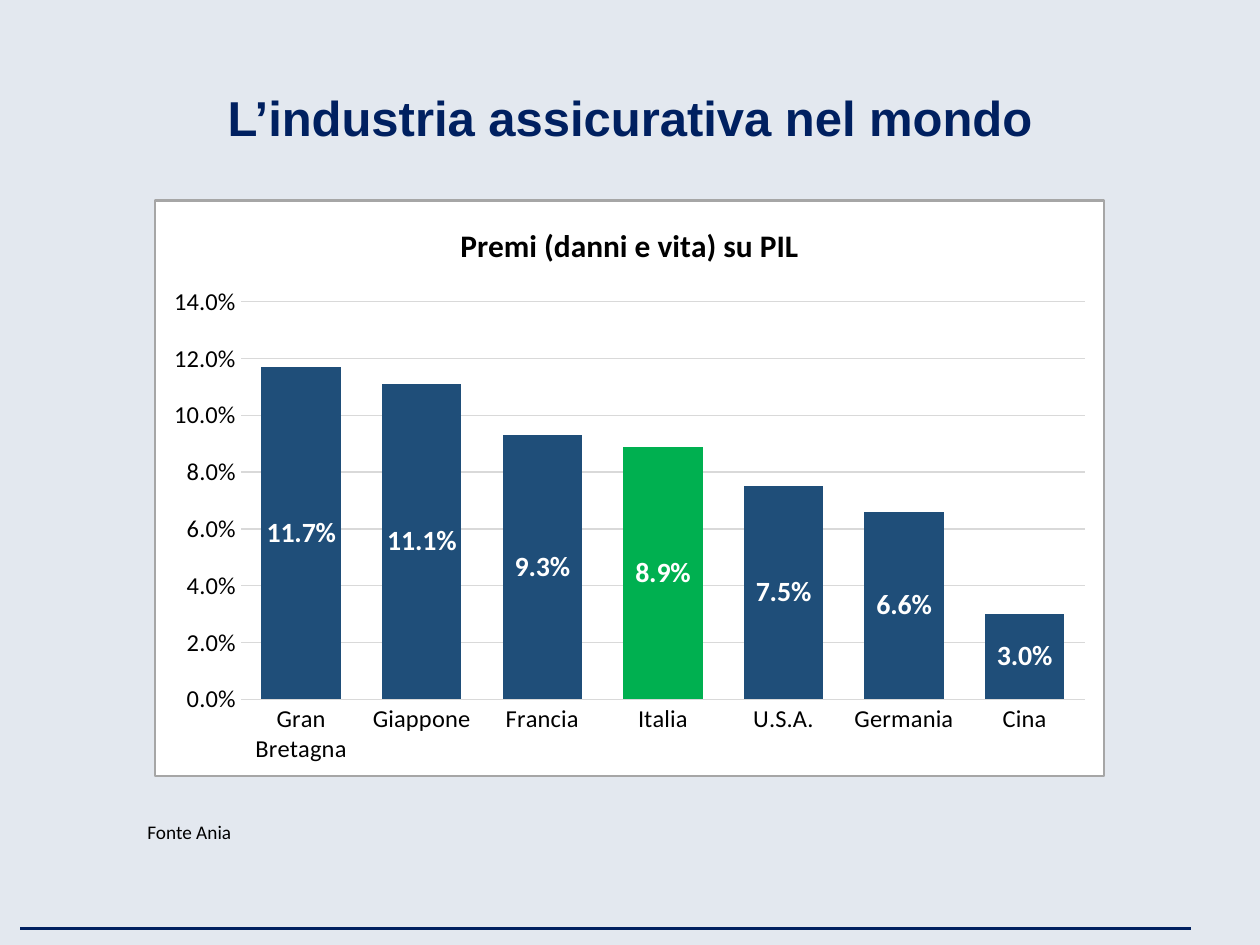
import pptx
import pptx.chart.data
import pptx.dml.color
import pptx.enum.chart
import pptx.enum.shapes
import pptx.enum.text
import pptx.oxml
import pptx.oxml.ns
import pptx.util
from pptx.util import Cm, Pt

NAVY, BLUE, GREEN = "002060", "1F4E79", "00B050"
GREY, BLACK, WHITE = "D9D9D9", "000000", "FFFFFF"
SHARES = {
    "Gran Bretagna": 0.117,
    "Giappone": 0.111,
    "Francia": 0.093,
    "Italia": 0.089,
    "U.S.A.": 0.075,
    "Germania": 0.066,
    "Cina": 0.03,
}


def color(code):
    return pptx.dml.color.RGBColor.from_string(code)


def paint(fill, code):
    fill.solid()
    fill.fore_color.rgb = color(code)


def style(font, size, code, bold=False, name="Calibri"):
    font.name = name
    font.size = Pt(size)
    font.bold = bold
    font.color.rgb = color(code)


def add_text(slide, box, text, size, code, bold=False, name="Calibri", center=False):
    frame = slide.shapes.add_textbox(*box).text_frame
    frame.word_wrap = True
    para = frame.paragraphs[0]
    if center:
        frame.vertical_anchor = pptx.enum.text.MSO_ANCHOR.MIDDLE
        para.alignment = pptx.enum.text.PP_ALIGN.CENTER
    run = para.add_run()
    run.text = text
    style(run.font, size, code, bold, name)


def add_rule(slide, left, right, top):
    kind = pptx.enum.shapes.MSO_CONNECTOR.STRAIGHT
    rule = slide.shapes.add_connector(kind, left, top, right, top)
    rule.line.color.rgb = color(NAVY)
    rule.line.width = Pt(2)
    props = rule.element.spPr
    props.append(props.makeelement(pptx.oxml.ns.qn("a:effectLst"), {}))


def frame_chart(chart, fill, edge, width):
    """Give the chart area a fill and a border."""
    props = pptx.oxml.parse_xml(
        f"<c:spPr {pptx.oxml.ns.nsdecls('c', 'a')}>"
        f'<a:solidFill><a:srgbClr val="{fill}"/></a:solidFill>'
        f'<a:ln w="{Pt(width)}"><a:solidFill><a:srgbClr val="{edge}"/>'
        "</a:solidFill></a:ln></c:spPr>"
    )
    chart.element.find(pptx.oxml.ns.qn("c:chart")).addnext(props)


def style_axes(chart):
    none = pptx.enum.chart.XL_TICK_MARK.NONE
    cats, vals = chart.category_axis, chart.value_axis
    for axis in (cats, vals):
        axis.major_tick_mark = axis.minor_tick_mark = none
        style(axis.tick_labels.font, 14, BLACK)
    vals.has_major_gridlines = True
    for line in (cats.format.line, vals.major_gridlines.format.line):
        line.color.rgb = color(GREY)
        line.width = Pt(0.75)
    vals.format.line.fill.background()
    vals.minimum_scale, vals.maximum_scale, vals.major_unit = 0, 0.14, 0.02
    vals.tick_labels.number_format = "0.0%"
    vals.tick_labels.number_format_is_linked = False


def style_bars(plot):
    plot.gap_width, plot.overlap = 52, 100
    plot.vary_by_categories = False
    bars = plot.series[0]
    paint(bars.format.fill, BLUE)
    paint(bars.points[list(SHARES).index("Italia")].format.fill, GREEN)
    labels = bars.data_labels
    labels.show_value = True
    labels.number_format = "0.0%"
    labels.number_format_is_linked = False
    labels.position = pptx.enum.chart.XL_LABEL_POSITION.CENTER
    style(labels.font, 16, WHITE, True)


def add_chart(slide, box, title):
    data = pptx.chart.data.CategoryChartData(number_format="0.0%")
    data.categories = list(SHARES)
    data.add_series("Series 1", list(SHARES.values()))
    kind = pptx.enum.chart.XL_CHART_TYPE.COLUMN_STACKED
    chart = slide.shapes.add_chart(kind, *box, data).chart
    style(chart.font, 10, BLACK)
    chart.has_legend = False
    chart.has_title = True
    run = chart.chart_title.text_frame.paragraphs[0].add_run()
    run.text = title
    style(run.font, 18, BLACK, True)
    chart.chart_title.include_in_layout = False
    style_axes(chart)
    style_bars(chart.plots[0])
    frame_chart(chart, WHITE, "A6A6A6", 1.5)


def main():
    deck = pptx.Presentation()
    deck.slide_width, deck.slide_height = Cm(25.4), Cm(19.05)
    slide = deck.slides.add_slide(deck.slide_layouts[6])
    paint(slide.background.fill, "E3E8EF")

    # Footer rule
    add_rule(slide, Cm(0.41), Cm(24), Cm(18.72))

    # Title and source
    head = (Cm(1.27), Cm(0.76), Cm(22.86), Cm(3.18))
    add_text(slide, head, "L’industria assicurativa nel mondo", 28, NAVY, True, "Arial", True)
    note = (Cm(2.72), Cm(16.41), Cm(21.79), Cm(0.74))
    add_text(slide, note, "Fonte Ania", 11, BLACK)

    # Premiums chart
    area = (Cm(3.1), Cm(4.01), Cm(19.18), Cm(11.66))
    add_chart(slide, area, "Premi (danni e vita) su PIL")

    deck.save("out.pptx")


if __name__ == "__main__":
    main()
